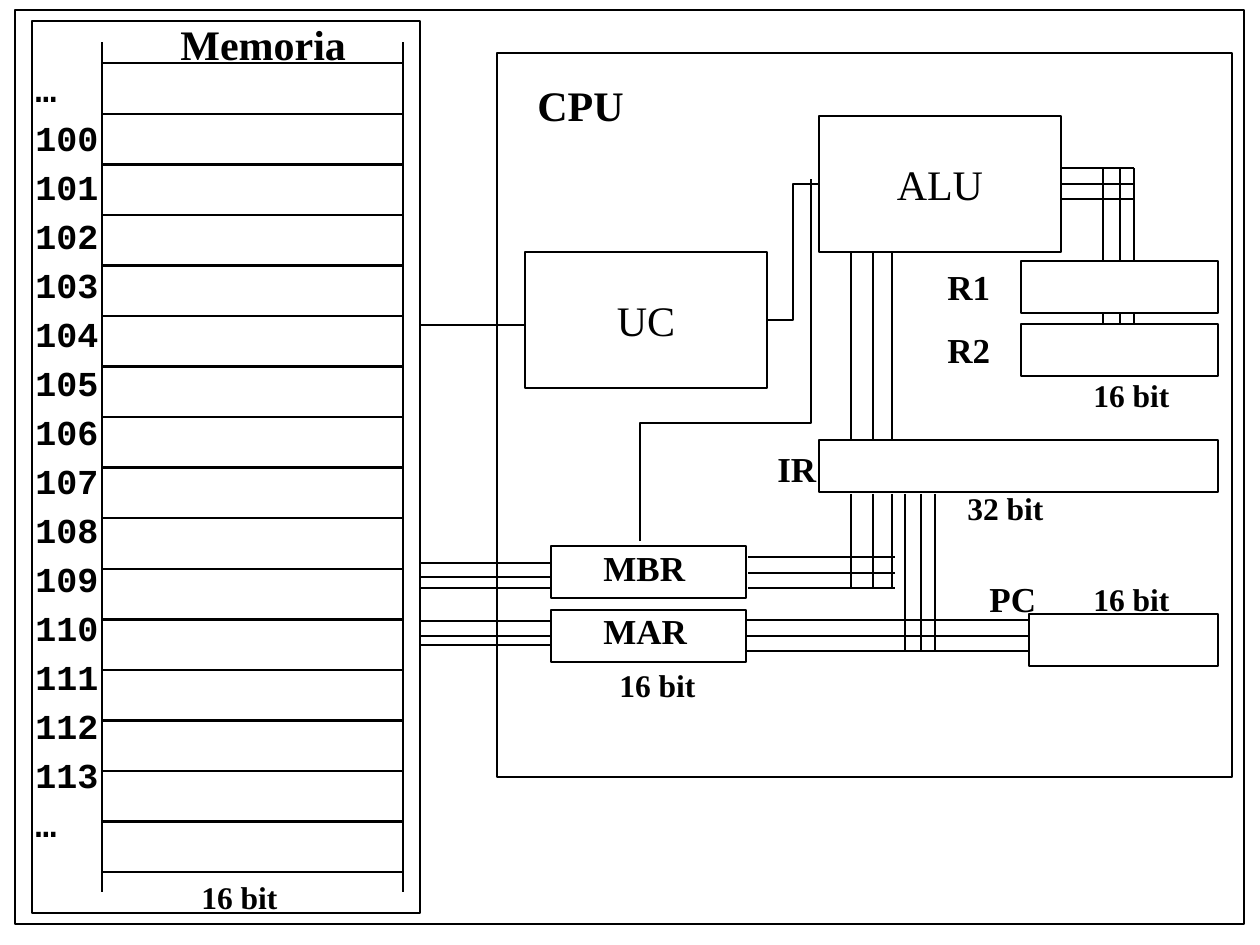
from dataclasses import dataclass

from lxml import etree
from pptx import Presentation
from pptx import util as u
from pptx.dml.color import RGBColor
from pptx.enum import shapes, text
from pptx.oxml.ns import qn

PX = 914400 / 126  # EMU per px
TOP, LEFT, BOTTOM, RIGHT = range(4)


@dataclass(frozen=True)
class Theme:
    ink: RGBColor = RGBColor(0, 0, 0)
    paper: RGBColor = RGBColor(255, 255, 255)
    serif: str = "Times New Roman"
    mono: str = "Courier New"
    title: int = 24
    label: int = 20
    width: int = 18
    stroke: float = 0.75


def px(*lengths):
    return [u.Emu(round(length * PX)) for length in lengths]


def write(frame, content, *, size, font, color, bold=True, align=None,
          anchor=text.MSO_ANCHOR.TOP, gap=0):
    """Fill a frame with one paragraph per line, with a gap in points between."""
    frame.word_wrap = False
    frame.vertical_anchor = anchor
    for i, line in enumerate(content.split("\n")):
        paragraph = frame.add_paragraph() if i else frame.paragraphs[0]
        if i and gap:
            paragraph.space_before = u.Pt(gap)
        paragraph.alignment = align
        run = paragraph.add_run()
        run.text = line
        run.font.size, run.font.name = u.Pt(size), font
        run.font.bold, run.font.color.rgb = bold, color


class Diagram:
    def __init__(self, slide, theme):
        self.slide, self.theme = slide, theme

    def box(self, x, y, w, h, caption=None, filled=False):
        box = self.slide.shapes.add_shape(shapes.MSO_SHAPE.RECTANGLE, *px(x, y, w, h))
        box.shadow.inherit = False
        if filled:
            box.fill.solid()
            box.fill.fore_color.rgb = self.theme.paper
        else:
            box.fill.background()
        box.line.color.rgb = self.theme.ink
        box.line.width = u.Pt(self.theme.stroke)
        if caption:
            write(box.text_frame, caption, size=self.theme.title, font=self.theme.serif,
                  color=self.theme.ink, bold=False, align=text.PP_ALIGN.CENTER,
                  anchor=text.MSO_ANCHOR.MIDDLE)
        return box

    def label(self, x, y, w, h, caption, size, font=None, gap=0):
        label = self.slide.shapes.add_textbox(*px(x, y, w, h))
        write(label.text_frame, caption, size=size, font=font or self.theme.serif,
              color=self.theme.ink, gap=gap)
        label.text_frame.auto_size = text.MSO_AUTO_SIZE.SHAPE_TO_FIT_TEXT

    def wire(self, x1, y1, x2, y2, begin=None, end=None,
             kind=shapes.MSO_CONNECTOR.STRAIGHT):
        wire = self.slide.shapes.add_connector(kind, *px(x1, y1, x2, y2))
        wire.line.color.rgb = self.theme.ink
        wire.line.width = u.Pt(self.theme.stroke)
        etree.SubElement(wire._element.spPr, qn("a:effectLst"))
        if begin:
            wire.begin_connect(*begin)
        if end:
            wire.end_connect(*end)
        return wire

    def rising_elbow(self, x1, y1, x2, y2, turn):
        """Elbow that leaves upward and turns at a height: a level one at 270 degrees."""
        cx, cy = (x1 + x2) / 2, (y1 + y2) / 2
        half_w, half_h = (y1 - y2) / 2, (x2 - x1) / 2
        wire = self.wire(cx - half_w, cy - half_h, cx + half_w, cy + half_h,
                         kind=shapes.MSO_CONNECTOR.ELBOW)
        properties = wire._element.spPr
        properties.find(qn("a:xfrm")).set("rot", str(270 * 60000))
        guides = properties.find(qn("a:prstGeom")).get_or_add_avLst()
        bend = round((y1 - turn) / (y1 - y2) * 100000)
        etree.SubElement(guides, qn("a:gd"), name="adj1", fmla=f"val {bend}")

    def level_bus(self, x1, x2, levels, begin=None, end=None):
        """Three level wires; the middle one may be joined to boxes."""
        for i, y in enumerate(levels):
            joins = (begin, end) if i == 1 else (None, None)
            self.wire(x1, y, x2, y, *joins)

    def upright_bus(self, y1, y2, columns):
        for x in columns:
            self.wire(x, y1, x, y2)


def draw_memory(d):
    cells, top, bottom, left, right = 16, 63, 872, 102, 403
    pitch = (bottom - top) / cells
    for i in range(cells):
        d.box(left, top + round(i * pitch), right - left, round(pitch))
    # Open ends of the memory column
    for x, reach in ((left, 0), (right, 10)):
        d.wire(x, top + reach, x, 42)
        d.wire(x, bottom - reach, x, 892)
    addresses = ["…", *map(str, range(100, 114)), "…"]
    d.label(23, 61, 90, 869, "\n".join(addresses), d.theme.label, d.theme.mono, gap=4)
    d.label(189, 872, 102, 50, "16 bit", d.theme.width)
    d.label(168, 12, 210, 63, "Memoria", d.theme.title)
    d.box(32, 21, 388, 892)


def draw_cpu(d):
    theme = d.theme
    d.box(497, 53, 735, 724)
    d.label(525, 73, 112, 63, "CPU", theme.title)

    # Control unit and arithmetic unit
    uc = d.box(525, 252, 242, 136, "UC")
    alu = d.box(819, 116, 242, 136, "ALU")
    d.wire(525, 325, 420, 325)
    d.wire(767, 320, 819, 184, (uc, RIGHT), (alu, LEFT), shapes.MSO_CONNECTOR.ELBOW)

    # Memory registers
    d.box(551, 546, 195, 52)
    mar = d.box(551, 610, 195, 52)
    d.box(1029, 614, 189, 52)
    d.level_bus(420, 551, (563, 577, 588))
    d.level_bus(420, 551, (621, 636, 645), end=(mar, LEFT))

    # Buses inside the CPU
    mar_levels = (620, 636, 651)
    ir_columns = (851, 873, 892)
    d.level_bus(1061, 1134, (168, 184, 199), begin=(alu, RIGHT))
    d.upright_bus(168, 357, (1103, 1120, 1134))
    d.level_bus(746, 891, mar_levels, begin=(mar, RIGHT))
    d.level_bus(851, 1029, mar_levels)
    d.level_bus(748, 895, (557, 573, 588))
    d.upright_bus(252, 451, ir_columns)
    d.upright_bus(494, 588, ir_columns)
    d.upright_bus(494, 651, (905, 921, 935))
    d.rising_elbow(640, 541, 811, 179, turn=423)

    # Registers that cover the buses
    for name, y in (("R1", 261), ("R2", 324)):
        d.box(1021, y, 197, 52, filled=True)
        d.label(935, y - 2, 68, 54, name, theme.label)
    d.box(819, 440, 399, 52, filled=True)

    # Register names and widths
    for name, x, y, w in (("IR", 765, 441, 64), ("PC", 977, 571, 72),
                          ("MBR", 591, 540, 112), ("MAR", 591, 603, 112)):
        d.label(x, y, w, 54, name, theme.label)
    for bits, x, y in ((16, 1081, 370), (16, 1081, 574), (32, 955, 483), (16, 607, 660)):
        d.label(x, y, 102, 50, f"{bits} bit", theme.width)


def main():
    deck = Presentation()
    deck.slide_width, deck.slide_height = px(1260, 945)
    diagram = Diagram(deck.slides.add_slide(deck.slide_layouts[6]), Theme())
    diagram.box(15, 10, 1229, 914, filled=True)
    draw_memory(diagram)
    draw_cpu(diagram)
    deck.save("out.pptx")


if __name__ == "__main__":
    main()
